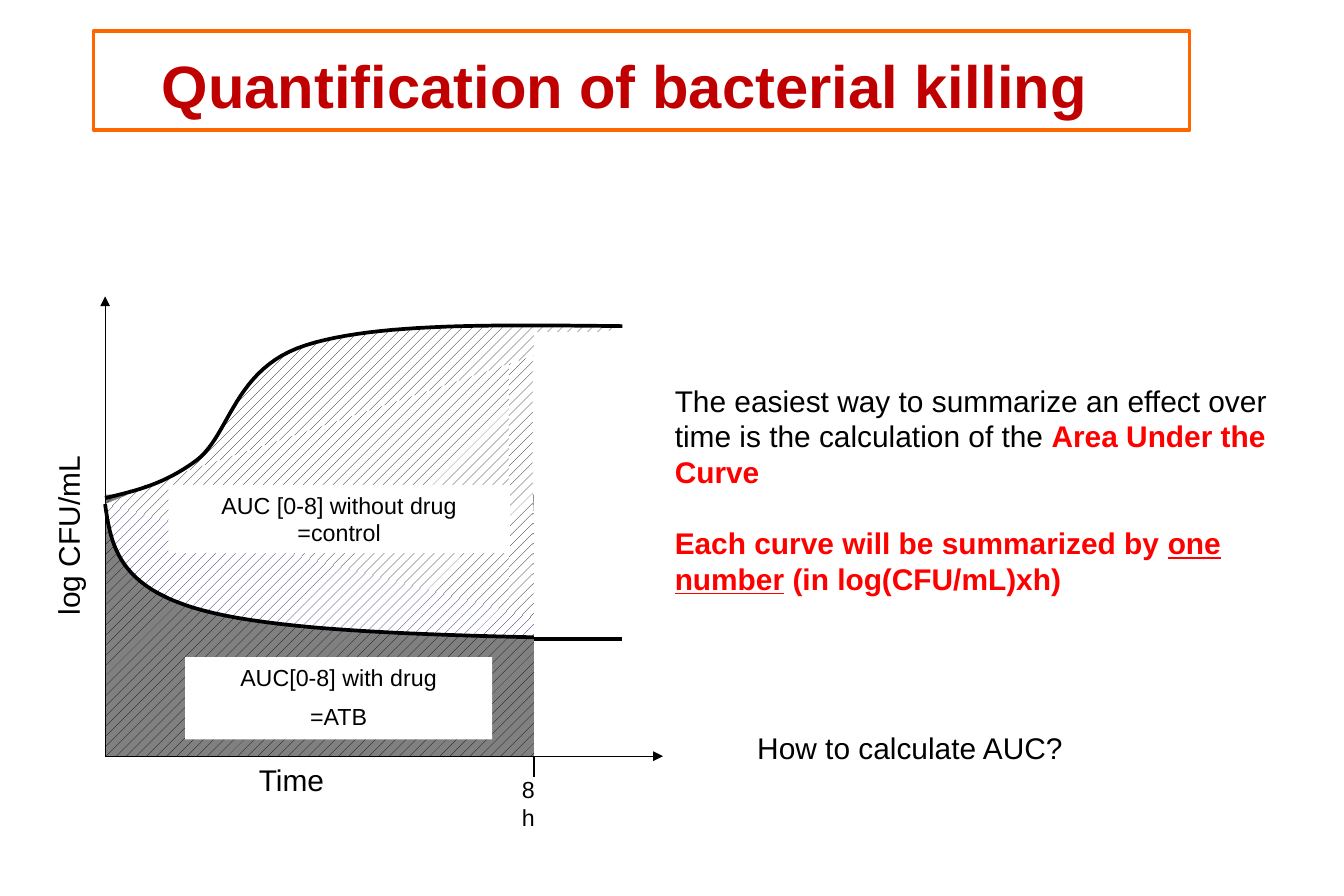
from lxml.etree import SubElement
from pptx import Presentation
from pptx.dml.color import RGBColor
from pptx.enum.dml import MSO_PATTERN
from pptx.enum.shapes import MSO_CONNECTOR, MSO_SHAPE
from pptx.enum.text import MSO_ANCHOR, PP_ALIGN
from pptx.oxml.ns import qn
from pptx.util import Emu, Pt

PX = 9144
FONT = "Arial"
BLACK, WHITE, GREY, NAVY = "000000", "FFFFFF", "808080", "000066"
RED, DARK_RED, ORANGE = "FF0000", "C00000", "FF6600"
RECT, TRIANGLE = MSO_SHAPE.RECTANGLE, MSO_SHAPE.ISOSCELES_TRIANGLE
LEFT, CENTER = PP_ALIGN.LEFT, PP_ALIGN.CENTER
CURVE_STEPS = 24

DRUG_CURVE = [(88, 422), (93, 457), (99, 492), (170, 511),
              (241, 530), (378, 532), (514, 535)]
CONTROL_CURVE = [(88, 417), (112, 411), (137, 406), (165, 385),
                 (193, 363), (196, 308), (256, 289),
                 (315, 270), (418, 272), (521, 273)]

DIAGRAM = [
    ("patch", RECT, (88, 414, 359, 219), 0, BLACK, GREY),
    ("line", (88, 633), (88, 248), 0.75, True),
    ("line", (88, 633), (555, 633), 0.75, True),
    ("patch", TRIANGLE, (137, 235, 259, 359), 267.5, BLACK, WHITE),
    ("patch", RECT, (501, 255, 54, 23), 0, None, WHITE),
    ("patch", RECT, (426, 289, 20, 234), 0, BLACK, WHITE),
    ("curve", DRUG_CURVE, NAVY),
    ("curve", CONTROL_CURVE, BLACK),
    ("patch", RECT, (447, 278, 88, 257), 0, None, WHITE),
    ("line", (447, 535), (521, 535), 2.25, False),
    ("line", (447, 634), (447, 650), 0.75, False),
]

TITLE = ((78, 26, 918, 83), "Quantification of bacterial killing")

SUMMARY = [
    [("The easiest way to summarize an effect over time is the calculation of the ", BLACK, False),
     ("Area Under the Curve", RED, False)],
    [("Each curve will be summarized by ", RED, False),
     ("one number", RED, True),
     (" (in log(CFU/mL)xh)", RED, False)],
]


def plain(*lines):
    return [[(line, BLACK, False)] for line in lines]


TEXTS = [
    ((555, 315, 526, 192), SUMMARY, 18, LEFT, 21, 0, None),
    ((624, 606, 302, 40), plain("How to calculate AUC?"), 18, LEFT, 0, 0, None),
    ((155, 550, 257, 69), plain("AUC[0-8] with drug", "=ATB"), 14, CENTER, 7, 0, WHITE),
    ((141, 406, 286, 57), plain("AUC [0-8] without drug", "=control"), 14, CENTER, 0, 0, WHITE),
    ((-40, 408, 194, 40), plain("log CFU/mL"), 18, LEFT, 0, 270, None),
    ((132, 633, 224, 39), plain("Time"), 18, CENTER, 0, 0, None),
    ((427, 644, 41, 32), plain("8 h"), 14, LEFT, 0, 0, None),
]


def color(value):
    return RGBColor.from_string(value)


def scaled(lengths):
    return [Emu(length * PX) for length in lengths]


def paint(shape, pattern, ground):
    if pattern:
        shape.fill.patterned()
        shape.fill.pattern = MSO_PATTERN.PERCENT_20
        shape.fill.fore_color.rgb = color(pattern)
        shape.fill.back_color.rgb = color(ground)
    else:
        shape.fill.solid()
        shape.fill.fore_color.rgb = color(ground)


def add_patch(page, kind, frame, turn, pattern, ground):
    shape = page.shapes.add_shape(kind, *scaled(frame))
    shape.shadow.inherit = False
    shape.rotation = turn
    shape.line.fill.background()
    paint(shape, pattern, ground)
    return shape


def add_line(page, start, end, width, arrow):
    line = page.shapes.add_connector(MSO_CONNECTOR.STRAIGHT, *scaled(start + end))
    line.line.color.rgb = color(BLACK)
    line.line.width = Pt(width)
    if arrow:
        SubElement(line.line._get_or_add_ln(), qn("a:tailEnd"), type="triangle")
    SubElement(line._element.spPr, qn("a:effectLst"))


def bezier(controls, t):
    weights = ((1 - t) ** 3, 3 * t * (1 - t) ** 2, 3 * t ** 2 * (1 - t), t ** 3)
    return tuple(round(PX * sum(w * c for w, c in zip(weights, axis)))
                 for axis in zip(*controls))


def add_curve(page, controls, pattern):
    points = [bezier(controls[first:first + 4], step / CURVE_STEPS)
              for first in range(0, len(controls) - 1, 3)
              for step in range(1, CURVE_STEPS + 1)]
    builder = page.shapes.build_freeform(*scaled(controls[0]))
    builder.add_line_segments(points, close=False)
    curve = builder.convert_to_shape()
    curve.shadow.inherit = False
    paint(curve, pattern, WHITE)
    curve.line.color.rgb = color(BLACK)
    curve.line.width = Pt(2.25)


def add_span(para, text, size, ink, bold=False, underline=False):
    span = para.add_run()
    span.text = text
    span.font.name = FONT
    span.font.size = Pt(size)
    span.font.color.rgb = color(ink)
    span.font.bold = bold
    span.font.underline = underline


def add_text(page, frame, paragraphs, size, align, gap, turn, ground):
    box = page.shapes.add_textbox(*scaled(frame))
    box.rotation = turn
    if ground:
        paint(box, None, ground)
    box.text_frame.word_wrap = True
    for index, spans in enumerate(paragraphs):
        para = box.text_frame.add_paragraph() if index else box.text_frame.paragraphs[0]
        para.alignment = align
        para.space_before = Pt(gap if index else 0)
        for text, ink, underline in spans:
            add_span(para, text, size, ink, ink == RED, underline)


def add_title(page, frame, text):
    box = add_patch(page, RECT, frame, 0, None, WHITE)
    box.fill.background()
    box.line.color.rgb = color(ORANGE)
    box.line.width = Pt(2)
    body = box.text_frame
    body.word_wrap = True
    body.vertical_anchor = MSO_ANCHOR.MIDDLE
    body.margin_left, body.margin_top, body.margin_right, body.margin_bottom = scaled((12, 8, 40, 8))
    para = body.paragraphs[0]
    para.alignment = CENTER
    para.line_spacing = 1.1
    add_span(para, text, 36, DARK_RED, True)


def main():
    deck = Presentation()
    deck.slide_width, deck.slide_height = scaled((1125, 750))
    page = deck.slides.add_slide(deck.slide_layouts[6])
    add_title(page, *TITLE)
    draw = {"patch": add_patch, "line": add_line, "curve": add_curve}
    for kind, *details in DIAGRAM:
        draw[kind](page, *details)
    for details in TEXTS:
        add_text(page, *details)
    deck.save("out.pptx")


if __name__ == "__main__":
    main()
